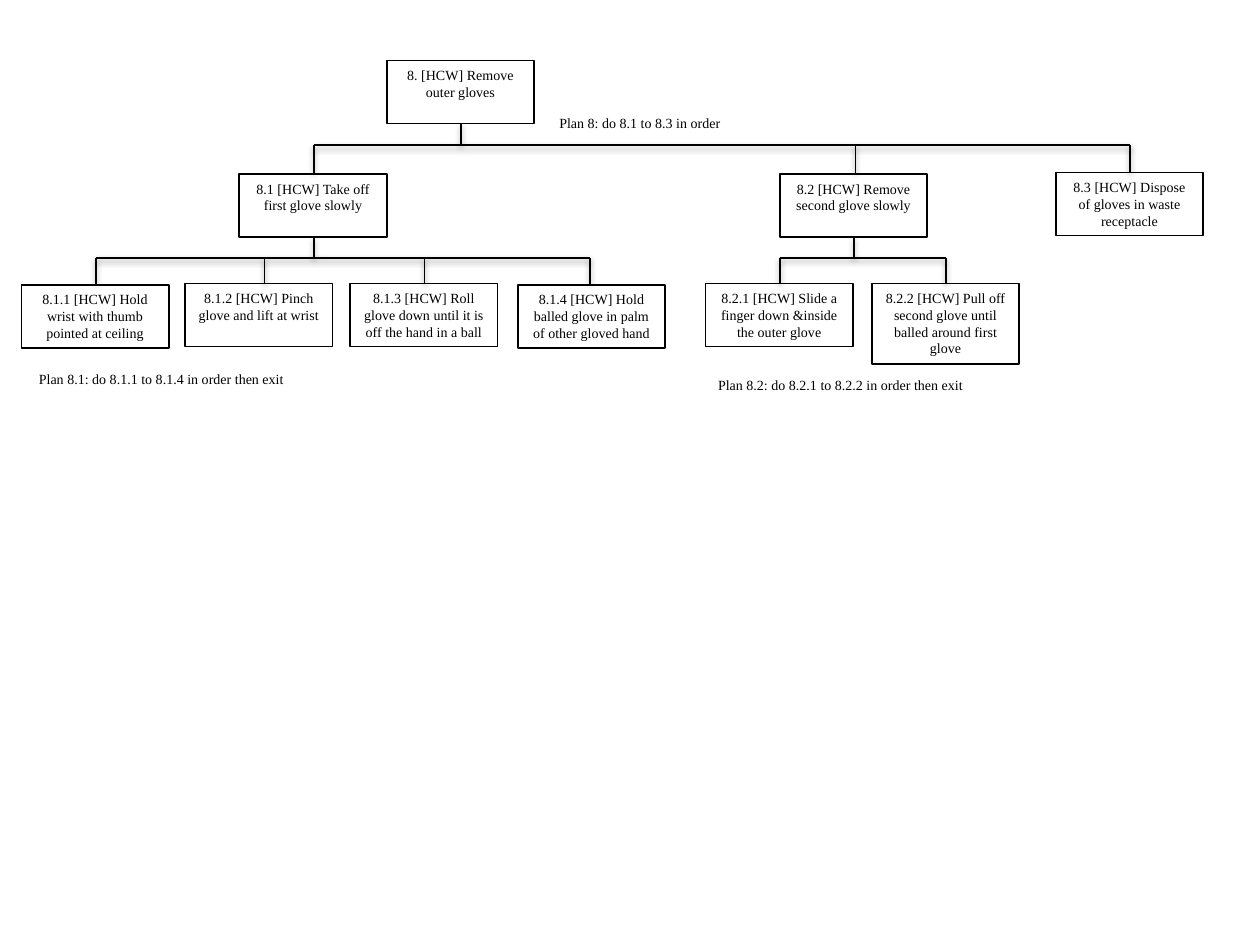
from lxml import etree
from pptx import Presentation
from pptx.dml.color import RGBColor
from pptx.enum.shapes import MSO_CONNECTOR as CONNECTOR, MSO_SHAPE as SHAPE
from pptx.enum.text import MSO_ANCHOR as ANCHOR, PP_ALIGN as ALIGN
from pptx.oxml import parse_xml
from pptx.util import Inches, Pt

BLACK = RGBColor(0, 0, 0)
WHITE = RGBColor(255, 255, 255)
FONT = "Times New Roman"

presentation = Presentation()
presentation.slide_width = Inches(10)
presentation.slide_height = Inches(7.5)
slide = presentation.slides.add_slide(presentation.slide_layouts[6])

# Grid: 100 columns by 75 rows
COLUMN = presentation.slide_width / 100
ROW = presentation.slide_height / 75
BOX_WIDTH, BOX_HEIGHT = 11.7, 5
PLAN_WIDTH, PLAN_HEIGHT = 25.2, 2.4

SHADOW = """<a:effectLst xmlns:a="http://schemas.openxmlformats.org/drawingml/2006/main">
<a:outerShdw blurRad="40000" dist="20000" dir="5400000" rotWithShape="0">
<a:srgbClr val="000000"><a:alpha val="38000"/></a:srgbClr></a:outerShdw></a:effectLst>"""


def write(shape, text, align):
    text_frame = shape.text_frame
    text_frame.word_wrap = True
    text_frame.vertical_anchor = ANCHOR.TOP
    text_frame.text = text
    paragraph = text_frame.paragraphs[0]
    paragraph.alignment = align
    font = paragraph.runs[0].font
    font.name, font.size, font.color.rgb = FONT, Pt(8), BLACK


def connect(x1, y1, x2, y2):
    line = slide.shapes.add_connector(
        CONNECTOR.STRAIGHT, int(x1 * COLUMN), int(y1 * ROW),
        int(x2 * COLUMN), int(y2 * ROW))
    line.line.color.rgb = BLACK
    line.line.width = Pt(1)
    line._element.spPr.append(parse_xml(SHADOW))


# Task boxes: left column, top row, height, text
tasks = [
    (30.7, 4.8, BOX_HEIGHT, "8. [HCW] Remove outer gloves"),
    (19.0, 13.8, BOX_HEIGHT, "8.1 [HCW] Take off first glove slowly"),
    (61.9, 13.8, BOX_HEIGHT, "8.2 [HCW] Remove second glove slowly"),
    (83.8, 13.7, BOX_HEIGHT, "8.3 [HCW] Dispose of gloves in waste receptacle"),
    (1.7, 22.6, BOX_HEIGHT, "8.1.1 [HCW] Hold wrist with thumb pointed at ceiling"),
    (14.7, 22.5, BOX_HEIGHT, "8.1.2 [HCW] Pinch glove and lift at wrist"),
    (27.8, 22.5, BOX_HEIGHT, "8.1.3 [HCW] Roll glove down until it is off the hand in a ball"),
    (41.1, 22.6, BOX_HEIGHT, "8.1.4 [HCW] Hold balled glove in palm of other gloved hand"),
    (56.0, 22.5, BOX_HEIGHT, "8.2.1 [HCW] Slide a finger down &inside the outer glove"),
    (69.2, 22.5, 6.4, "8.2.2 [HCW] Pull off second glove until balled around first glove"),
]
for left, top, height, text in tasks:
    box = slide.shapes.add_shape(
        SHAPE.RECTANGLE, int(left * COLUMN), int(top * ROW),
        int(BOX_WIDTH * COLUMN), int(height * ROW))
    box.shadow.inherit = False
    box.fill.solid()
    box.fill.fore_color.rgb = WHITE
    box.line.color.rgb = BLACK
    box.line.width = Pt(1)
    write(box, text, ALIGN.CENTER)

# Branches: parent column, parent bottom, bar row, child columns, child top
branches = [
    (36.6, 9.8, 11.5, [24.9, 67.9, 89.7], 13.7),
    (24.9, 18.8, 20.5, [7.6, 21.0, 33.7, 46.8], 22.5),
    (67.8, 18.8, 20.5, [61.9, 75.1], 22.5),
]
for parent, bottom, bar, children, child_top in branches:
    connect(children[0], bar, children[-1], bar)
    connect(parent, bottom, parent, bar)
    for child in children:
        connect(child, bar, child, child_top)

# Plan notes
plans = [
    (43.4, 8.6, "Plan 8: do 8.1 to 8.3 in order"),
    (2.1, 28.9, "Plan 8.1: do 8.1.1 to 8.1.4 in order then exit"),
    (56.0, 29.4, "Plan 8.2: do 8.2.1 to 8.2.2 in order then exit"),
]
for left, top, text in plans:
    note = slide.shapes.add_textbox(
        int(left * COLUMN), int(top * ROW),
        int(PLAN_WIDTH * COLUMN), int(PLAN_HEIGHT * ROW))
    write(note, text, ALIGN.LEFT)

presentation.save("out.pptx")
